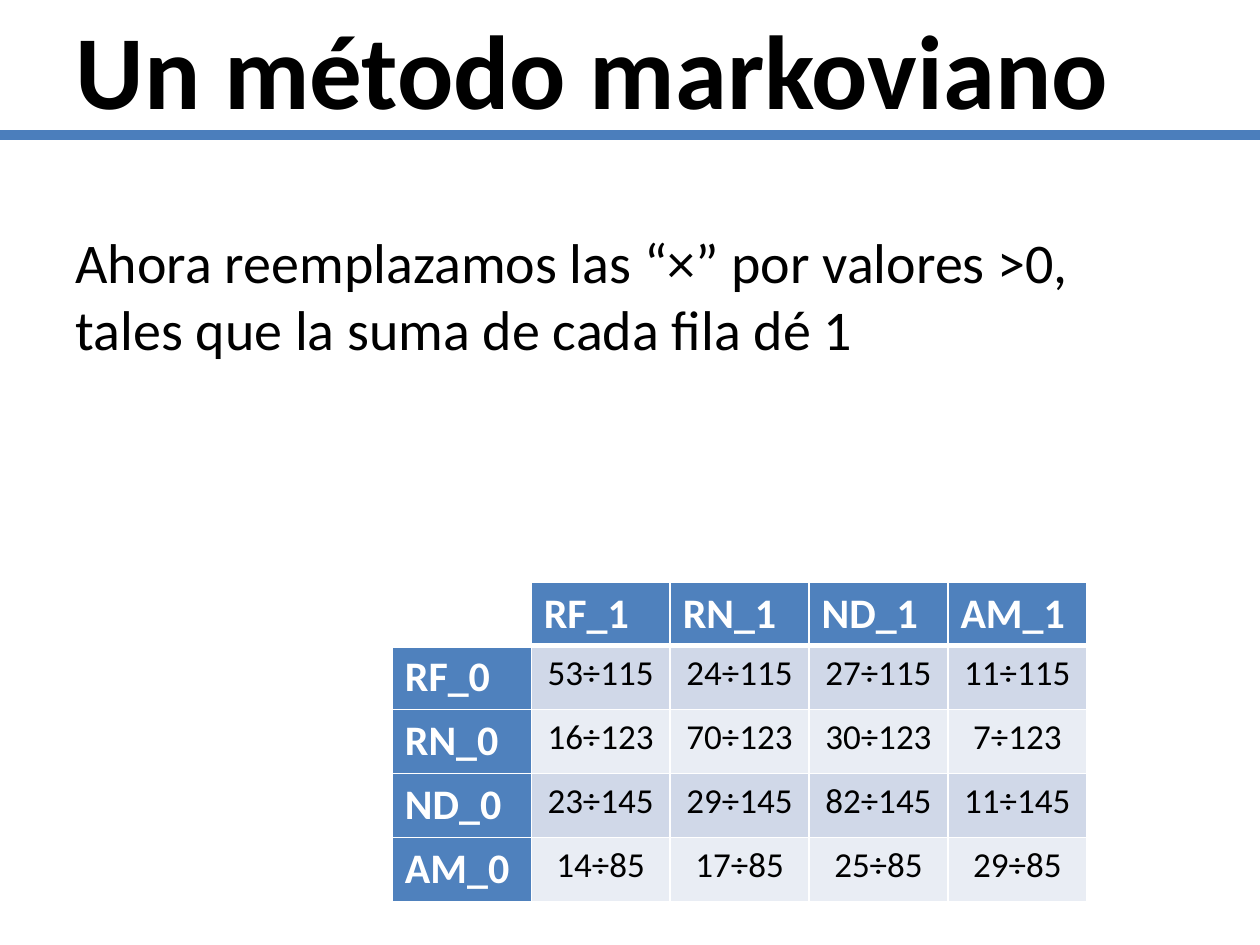
import dataclasses
import typing

import pptx
import pptx.dml.color
import pptx.enum.shapes
import pptx.enum.text
import pptx.oxml
import pptx.oxml.ns
import pptx.util
from lxml import etree

Cm = pptx.util.Cm
Pt = pptx.util.Pt
Align = pptx.enum.text.PP_ALIGN
Anchor = pptx.enum.text.MSO_ANCHOR


@dataclasses.dataclass(frozen=True)
class Theme:
    font: str = "Calibri"
    ink: str = "000000"
    white: str = "FFFFFF"
    rule: str = "4B7EBC"
    head: str = "4F81BD"
    bands: tuple[str, str] = ("D0D8E8", "E9EDF4")
    title: int = 60
    body: int = 32
    label: int = 24
    value: int = 20


@dataclasses.dataclass(frozen=True)
class Box:
    left: float
    top: float
    width: float
    height: float


@dataclasses.dataclass(frozen=True)
class Entry:
    text: str
    size: int
    color: str
    bold: bool
    align: Align
    fill: typing.Optional[str] = None


THEME = Theme()
WIDTH, HEIGHT = 25.4, 19.05
RULE_TOP = 2.72
TITLE = Box(1.27, 0, 22.86, RULE_TOP)
BODY = Box(1.27, 4.45, 22.86, 12.57)
TABLE = Box(7.91, 11.73, 14.0, 6.43)

STATES = ("RF", "RN", "ND", "AM")
TOTALS = (115, 123, 145, 85)
COUNTS = (
    (53, 24, 27, 11),
    (16, 70, 30, 7),
    (23, 29, 82, 11),
    (14, 17, 25, 29),
)


def rgb(code: str) -> pptx.dml.color.RGBColor:
    return pptx.dml.color.RGBColor.from_string(code)


def apply(target: typing.Any, form: dict[str, typing.Any]) -> None:
    for name, value in form.items():
        setattr(target, name, value)


def write(frame: typing.Any, entry: Entry) -> None:
    par = frame.paragraphs[0]
    par.alignment = entry.align
    run = par.add_run()
    run.text = entry.text
    apply(run.font, {"name": THEME.font, "size": Pt(entry.size), "bold": entry.bold})
    run.font.color.rgb = rgb(entry.color)


def fill_holder(shape: typing.Any, box: Box, entry: Entry, anchor: Anchor) -> None:
    apply(shape, {name: Cm(size) for name, size in dataclasses.asdict(box).items()})
    apply(shape.text_frame, {
        "word_wrap": True,
        "auto_size": pptx.enum.text.MSO_AUTO_SIZE.NONE,
        "vertical_anchor": anchor,
    })
    write(shape.text_frame, entry)


def drop_bullet(par: typing.Any) -> None:
    props = par._p.get_or_add_pPr()
    props.set("marL", "0")
    props.set("indent", "0")
    etree.SubElement(props, pptx.oxml.ns.qn("a:buNone"))


def draw_rule(slide: typing.Any) -> None:
    line = slide.shapes.add_connector(
        pptx.enum.shapes.MSO_CONNECTOR.STRAIGHT,
        Cm(0), Cm(RULE_TOP), Cm(WIDTH), Cm(RULE_TOP),
    )
    line.line.color.rgb = rgb(THEME.rule)
    line.line.width = Pt(6)
    etree.SubElement(line._element.spPr, pptx.oxml.ns.qn("a:effectLst"))


def edge_cell(cell: typing.Any, widths: dict[str, int]) -> None:
    props = cell._tc.get_or_add_tcPr()
    for spot, (side, width) in enumerate(widths.items()):
        props.insert(spot, pptx.oxml.parse_xml(
            f'<a:ln{side} {pptx.oxml.ns.nsdecls("a")} w="{Pt(width)}">'
            f'<a:solidFill><a:srgbClr val="{THEME.white}"/></a:solidFill></a:ln{side}>'
        ))


def label(text: str) -> Entry:
    return Entry(text, THEME.label, THEME.white, True, Align.LEFT, THEME.head)


def matrix() -> list[list[typing.Optional[Entry]]]:
    rows = [[None] + [label(f"{state}_1") for state in STATES]]
    for i, (state, total, counts) in enumerate(zip(STATES, TOTALS, COUNTS)):
        band = THEME.bands[i % 2]
        rows.append([label(f"{state}_0")] + [
            Entry(f"{count}÷{total}", THEME.value, THEME.ink, False, Align.CENTER, band)
            for count in counts
        ])
    return rows


def draw_table(slide: typing.Any, box: Box) -> None:
    rows = matrix()
    size = len(rows)
    table = slide.shapes.add_table(
        size, size, Cm(box.left), Cm(box.top), Cm(box.width), Cm(box.height)
    ).table
    apply(table, {"first_row": False, "horz_banding": False})
    for r, row in enumerate(rows):
        for c, entry in enumerate(row):
            cell = table.cell(r, c)
            if entry is None:
                cell.fill.background()
            else:
                cell.fill.solid()
                cell.fill.fore_color.rgb = rgb(entry.fill)
                write(cell.text_frame, entry)
            # A thick edge parts the header from the values
            edge_cell(cell, {"L": 1, "R": 1, "T": 3 if r == 1 else 1, "B": 3 if r == 0 else 1})


def main() -> None:
    deck = pptx.Presentation()
    apply(deck, {"slide_width": Cm(WIDTH), "slide_height": Cm(HEIGHT)})
    slide = deck.slides.add_slide(deck.slide_layouts[1])

    # Title and the rule below it
    draw_rule(slide)
    fill_holder(
        slide.shapes.title, TITLE,
        Entry("Un método markoviano", THEME.title, THEME.ink, True, Align.LEFT),
        Anchor.MIDDLE,
    )

    # Body text
    body = slide.placeholders[1]
    fill_holder(
        body, BODY,
        Entry("Ahora reemplazamos las “×” por valores >0, tales que la suma de cada fila dé 1",
              THEME.body, THEME.ink, False, Align.LEFT),
        Anchor.TOP,
    )
    drop_bullet(body.text_frame.paragraphs[0])

    # Transition matrix
    draw_table(slide, TABLE)
    deck.save("out.pptx")


if __name__ == "__main__":
    main()
